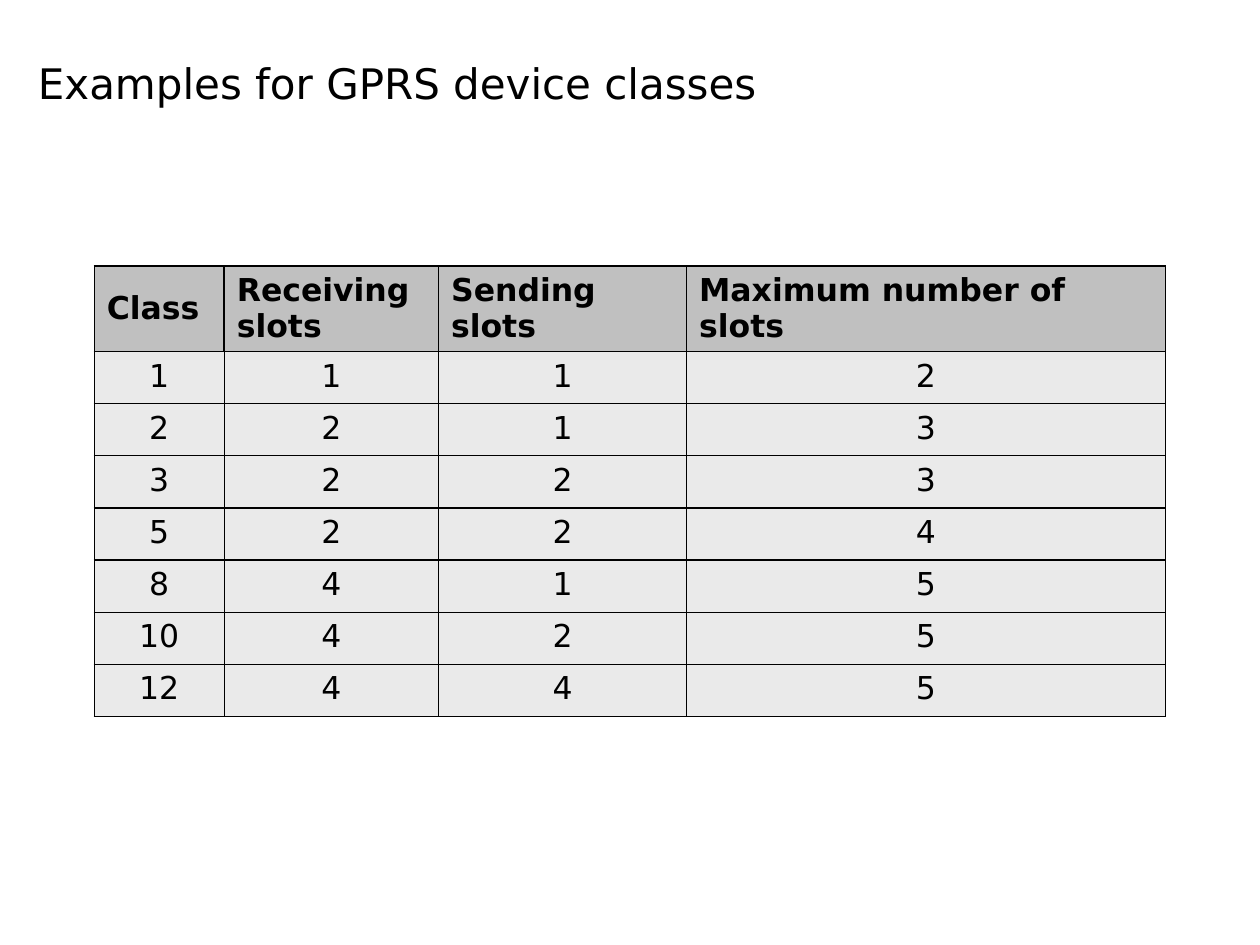
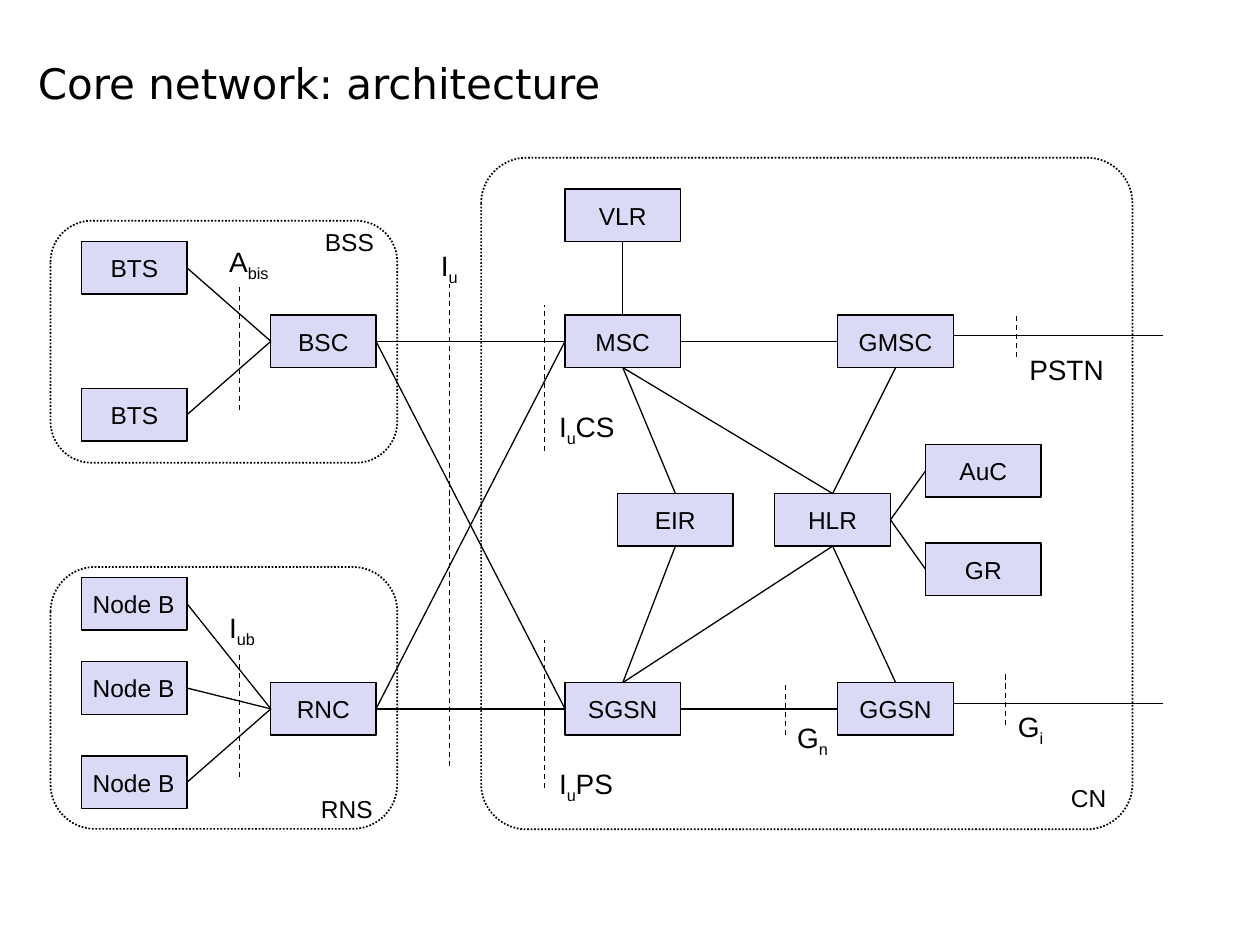
"""Build two slides: GPRS device classes and the core network architecture."""
from lxml.etree import SubElement
from pptx import Presentation
from pptx.dml.color import RGBColor
from pptx.enum.dml import MSO_LINE
from pptx.enum.shapes import MSO_CONNECTOR, MSO_SHAPE
from pptx.enum.text import MSO_ANCHOR, PP_ALIGN
from pptx.oxml.ns import qn
from pptx.util import Cm, Pt

BLACK = RGBColor(0x00, 0x00, 0x00)
HEADER_GREY = RGBColor(0xC0, 0xC0, 0xC0)
ROW_GREY = RGBColor(0xEA, 0xEA, 0xEA)
NODE_LILAC = RGBColor(0xDA, 0xDA, 0xF6)
TITLE_FONT = "DejaVu Sans"
LABEL_FONT = "Arial"
THIN, THICK = 0.75, 1
TOP, LEFT, BOTTOM, RIGHT = range(4)
NODE_HEIGHT = 1.06
RADIO_WIDTH, CORE_WIDTH = 2.12, 2.33

CLASS_COLUMNS = (2.62, 4.32, 5, 9.65)
CLASS_ROWS = [
    ("Class", "Receiving slots", "Sending slots", "Maximum number of slots"),
    (1, 1, 1, 2),
    (2, 2, 1, 3),
    (3, 2, 2, 3),
    (5, 2, 2, 4),
    (8, 4, 1, 5),
    (10, 4, 2, 5),
    (12, 4, 4, 5),
]

SUBSYSTEMS = [
    (9.7, 3.18, 13.13, 13.54, 0.07),
    (1.02, 11.43, 6.99, 5.28, 0.17),
    (1.02, 4.45, 6.99, 4.88, 0.17),
]
RADIO_NODES = {
    "BTS/1": (1.65, 4.87),
    "BTS/2": (1.65, 7.83),
    "BSC": (5.46, 6.35),
    "Node B/1": (1.65, 11.64),
    "Node B/2": (1.65, 13.34),
    "Node B/3": (1.65, 15.24),
    "RNC": (5.46, 13.76),
}
CORE_NODES = {
    "VLR": (11.39, 3.81),
    "MSC": (11.39, 6.35),
    "GMSC": (16.89, 6.35),
    "EIR": (12.45, 9.95),
    "HLR": (15.62, 9.95),
    "AuC": (18.66, 8.96),
    "GR": (18.66, 10.95),
    "SGSN": (11.39, 13.76),
    "GGSN": (16.89, 13.76),
}
SIDEWAYS_LINKS = [
    ("BTS/1", "BSC"), ("BTS/2", "BSC"),
    ("Node B/1", "RNC"), ("Node B/2", "RNC"), ("Node B/3", "RNC"),
    ("BSC", "MSC"), ("BSC", "SGSN"), ("RNC", "MSC"), ("RNC", "SGSN"),
    ("MSC", "GMSC"), ("SGSN", "GGSN"), ("HLR", "AuC"), ("HLR", "GR"),
]
DOWNWARD_LINKS = [
    ("VLR", "MSC"), ("MSC", "EIR"), ("MSC", "HLR"), ("GMSC", "HLR"),
    ("EIR", "SGSN"), ("HLR", "SGSN"), ("HLR", "GGSN"),
]
OUTSIDE_LINE_HEIGHTS = (6.77, 14.18)
INTERFACE_LINES = [
    (4.83, 5.72, 8.26),
    (4.83, 13.13, 15.67),
    (9.06, 5.72, 15.45),
    (10.97, 6.14, 9.1),
    (10.97, 12.91, 15.88),
    (15.83, 13.76, 14.82),
    (20.27, 13.55, 14.61),
    (20.49, 6.35, 7.2),
]
INTERFACE_LABELS = [
    ("A|bis", 4.37, 4.8, 1.4),
    ("I|ub", 4.37, 12.19, 1.09),
    ("I|u", 8.64, 4.88, 0.89),
    ("G|n", 15.82, 14.4, 1.17),
    ("G|i", 20.27, 14.17, 1.04),
    ("PSTN", 20.5, 6.99, 2.01),
]
DOMAIN_LABELS = [("I|u|CS", 10.49, 8.13), ("I|u|PS", 10.49, 15.32)]
SUBSYSTEM_LABELS = [
    ("BSS", 6.3, 4.45, 1.5),
    ("RNS", 6.22, 15.88, 1.55),
    ("CN", 21.34, 15.67, 1.22),
]


def write_text(frame, text, size=14, font=LABEL_FONT, bold=False, align=PP_ALIGN.LEFT):
    """Fill a text frame; every second part between bars is a subscript."""
    para = frame.paragraphs[0]
    para.alignment = align
    for index, part in enumerate(text.split("|")):
        span = para.add_run()
        span.text = part
        span.font.size = Pt(size)
        span.font.name = font
        span.font.bold = bold
        span.font.color.rgb = BLACK
        if index % 2:
            span._r.get_or_add_rPr().set("baseline", "-25000")


def add_titled_page(deck, title):
    """Add a title-only page with the shared title style."""
    page = deck.slides.add_slide(deck.slide_layouts[5])
    box = page.shapes.title
    box.left, box.top, box.width, box.height = Cm(0.51), Cm(0), Cm(16.8), Cm(2.31)
    box.text_frame.vertical_anchor = MSO_ANCHOR.BOTTOM
    write_text(box.text_frame, title, size=24, font=TITLE_FONT)
    return page


def add_border(cell, edge, width):
    """Draw one black edge of a table cell."""
    properties = cell._tc.get_or_add_tcPr()
    line = SubElement(properties, qn(f"a:ln{edge}"), w=str(Pt(width)))
    fill = SubElement(line, qn("a:solidFill"))
    SubElement(fill, qn("a:srgbClr"), val=str(BLACK))


def add_class_table(page):
    """Add the table of device classes with a grey header row."""
    last_row, last_column = len(CLASS_ROWS) - 1, len(CLASS_COLUMNS) - 1
    table = page.shapes.add_table(
        last_row + 1, last_column + 1, Cm(1.9), Cm(5.36), Cm(21.59), Cm(9.08)
    ).table
    table.first_row = table.horz_banding = False
    for column, width in zip(table.columns, CLASS_COLUMNS):
        column.width = Cm(width)
    for row_index, values in enumerate(CLASS_ROWS):
        header = row_index == 0
        table.rows[row_index].height = Cm(1.73 if header else 1.05)
        for column_index, value in enumerate(values):
            cell = table.cell(row_index, column_index)
            strong_edges = {
                "L": header or column_index == 0,
                "R": header or column_index == last_column,
                "T": row_index <= 1,
                "B": header or row_index == last_row,
            }
            for edge, strong in strong_edges.items():
                add_border(cell, edge, THICK if strong else THIN)
            cell.fill.solid()
            cell.fill.fore_color.rgb = HEADER_GREY if header else ROW_GREY
            cell.vertical_anchor = MSO_ANCHOR.MIDDLE if header else MSO_ANCHOR.TOP
            write_text(cell.text_frame, str(value), size=18, font=TITLE_FONT, bold=header,
                       align=PP_ALIGN.LEFT if header else PP_ALIGN.CENTER)


def add_outlined_shape(page, kind, left, top, width, height, line_width):
    """Add a shape with a black outline and no shadow."""
    box = page.shapes.add_shape(kind, Cm(left), Cm(top), Cm(width), Cm(height))
    box.shadow.inherit = False
    box.line.color.rgb = BLACK
    box.line.width = Pt(line_width)
    return box


def add_subsystem(page, left, top, width, height, rounding):
    """Add a dotted rounded frame around a subsystem."""
    frame = add_outlined_shape(
        page, MSO_SHAPE.ROUNDED_RECTANGLE, left, top, width, height, THICK)
    frame.adjustments[0] = rounding
    frame.fill.background()
    frame.line.dash_style = MSO_LINE.ROUND_DOT


def add_node(page, label, left, top, width):
    """Add a labelled network node."""
    node = add_outlined_shape(
        page, MSO_SHAPE.RECTANGLE, left, top, width, NODE_HEIGHT, THIN)
    node.fill.solid()
    node.fill.fore_color.rgb = NODE_LILAC
    node.text_frame.word_wrap = False
    node.text_frame.vertical_anchor = MSO_ANCHOR.MIDDLE
    write_text(node.text_frame, label,
               align=PP_ALIGN.RIGHT if label == "Node B" else PP_ALIGN.CENTER)
    return node


def add_line(page, start=(0, 0), end=(0, 0), dashed=False):
    """Add a thin black line, dashed on request."""
    line = page.shapes.add_connector(
        MSO_CONNECTOR.STRAIGHT, *(Cm(length) for length in (*start, *end)))
    line.line.color.rgb = BLACK
    line.line.width = Pt(THIN)
    if dashed:
        line.line.dash_style = MSO_LINE.DASH
    SubElement(line._element.spPr, qn("a:effectLst"))
    return line


def add_links(page, nodes, links, start_side, end_side):
    """Join pairs of nodes at the given sides."""
    for start, end in links:
        link = add_line(page)
        link.begin_connect(nodes[start], start_side)
        link.end_connect(nodes[end], end_side)


def add_label(page, text, left, top, width, height=0.94, size=16, indent=0.25):
    """Add a free label."""
    box = page.shapes.add_textbox(Cm(left), Cm(top), Cm(width), Cm(height))
    box.text_frame.word_wrap = False
    box.text_frame.margin_left = Cm(indent)
    write_text(box.text_frame, text, size=size)


def add_architecture(page):
    """Draw the radio subsystems, the core network and their interfaces."""
    for subsystem in SUBSYSTEMS:
        add_subsystem(page, *subsystem)
    nodes = {}
    for group, width in ((RADIO_NODES, RADIO_WIDTH), (CORE_NODES, CORE_WIDTH)):
        for name, (left, top) in group.items():
            nodes[name] = add_node(page, name.split("/")[0], left, top, width)
    add_links(page, nodes, SIDEWAYS_LINKS, RIGHT, LEFT)
    add_links(page, nodes, DOWNWARD_LINKS, BOTTOM, TOP)
    for height in OUTSIDE_LINE_HEIGHTS:
        add_line(page, (19.22, height), (23.45, height))
    for left, top, bottom in INTERFACE_LINES:
        add_line(page, (left, bottom), (left, top), dashed=True)
    for label in INTERFACE_LABELS:
        add_label(page, *label)
    for label in DOMAIN_LABELS:
        add_label(page, *label, width=3.43, height=1.6, indent=0.78)
    for label in SUBSYSTEM_LABELS:
        add_label(page, *label, height=0.84, size=14)


def main():
    """Build and save the deck."""
    deck = Presentation()
    deck.slide_width, deck.slide_height = Cm(25.4), Cm(19.05)
    add_class_table(add_titled_page(deck, "Examples for GPRS device classes"))
    add_architecture(add_titled_page(deck, "Core network: architecture"))
    deck.save("out.pptx")


if __name__ == "__main__":
    main()
